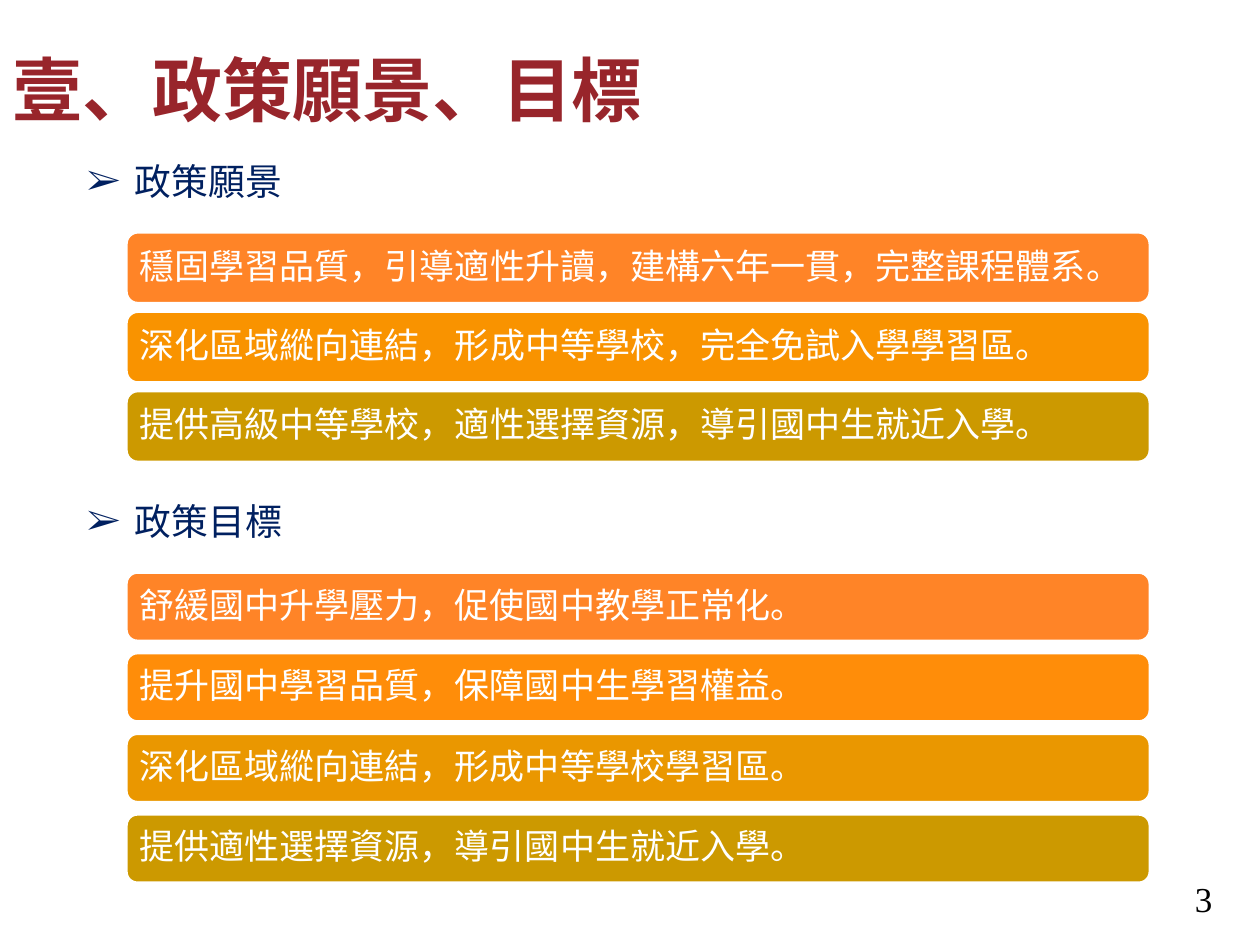
from dataclasses import dataclass

from lxml.etree import SubElement
from pptx import Presentation
from pptx.dml.color import RGBColor as RGB
from pptx.enum.shapes import MSO_SHAPE as SHAPE
from pptx.enum.text import MSO_ANCHOR as ANCHOR, MSO_AUTO_SIZE as FIT, PP_ALIGN as ALIGN
from pptx.oxml.ns import qn
from pptx.util import Inches, Pt

TITLE = "壹、政策願景、目標"
PAGE = "3"
SECTIONS = [
    {
        "heading": "政策願景", "heading_top": 1.21,
        "top": 1.84, "pitch": 0.63, "height": 0.57,
        "bars": [
            ("穩固學習品質，引導適性升讀，建構六年一貫，完整課程體系。", "FF8427"),
            ("深化區域縱向連結，形成中等學校，完全免試入學學習區。", "F99300"),
            ("提供高級中等學校，適性選擇資源，導引國中生就近入學。", "CC9900"),
        ],
    },
    {
        "heading": "政策目標", "heading_top": 3.91,
        "top": 4.54, "pitch": 0.64, "height": 0.55,
        "bars": [
            ("舒緩國中升學壓力，促使國中教學正常化。", "FF8427"),
            ("提升國中學習品質，保障國中生學習權益。", "FF8D09"),
            ("深化區域縱向連結，形成中等學校學習區。", "EA9700"),
            ("提供適性選擇資源，導引國中生就近入學。", "CC9900"),
        ],
    },
]


@dataclass(frozen=True)
class Theme:
    font: str = "Times New Roman"
    title: str = "98252B"
    heading: str = "002060"
    page: str = "000000"
    white: str = "FFFFFF"
    title_size: int = 40
    heading_size: int = 21
    text_size: int = 20


T = Theme()


def place(sp, left, top, width, height):
    sp.left, sp.top, sp.width, sp.height = map(Inches, (left, top, width, height))


def write(sp, text, size, color, align=ALIGN.LEFT, anchor=ANCHOR.MIDDLE, bold=False, spacing=1.0):
    tf = sp.text_frame
    tf.word_wrap = True
    tf.auto_size = FIT.NONE
    tf.vertical_anchor = anchor
    p = tf.paragraphs[0]
    p.alignment = align
    p.line_spacing = spacing
    p.space_before = Pt(0)
    r = p.add_run()
    r.text = text
    r.font.name = T.font
    r.font.size = Pt(size)
    r.font.bold = bold
    r.font.color.rgb = RGB.from_string(color)
    return p


def add_bullet(p, char, indent):
    pPr = p._p.get_or_add_pPr()
    pPr.set("marL", str(Inches(indent)))
    pPr.set("indent", str(-Inches(indent)))
    SubElement(pPr, qn("a:buFont"), typeface=T.font)
    SubElement(pPr, qn("a:buChar"), char=char)


def add_bar(s, text, color, top, height):
    sp = s.shapes.add_shape(SHAPE.ROUNDED_RECTANGLE, Inches(1), Inches(top), Inches(8.13), Inches(height))
    sp.shadow.inherit = False
    sp.fill.solid()
    sp.fill.fore_color.rgb = RGB.from_string(color)
    sp.line.color.rgb = RGB.from_string(T.white)
    sp.line.width = Pt(2)
    write(sp, text, T.text_size, T.white, spacing=0.9)
    tf = sp.text_frame
    tf.margin_left = tf.margin_right = Inches(0.08)
    tf.margin_top = tf.margin_bottom = Inches(0.08)


def main():
    prs = Presentation()
    prs.slide_width, prs.slide_height = Inches(10), Inches(7.5)
    s = prs.slides.add_slide(prs.slide_layouts.get_by_name("Two Content"))
    title, *headings = list(s.placeholders)[:3]

    place(title, 0, 0.02, 10, 1.45)
    write(title, TITLE, T.title_size, T.title, bold=True, spacing=0.9)

    for section, sp in zip(SECTIONS, headings):
        place(sp, 0.59, section["heading_top"], 2, 0.45)
        p = write(sp, section["heading"], T.heading_size, T.heading, anchor=ANCHOR.TOP)
        add_bullet(p, "➢", 0.38)
        for i, (text, color) in enumerate(section["bars"]):
            add_bar(s, text, color, section["top"] + i * section["pitch"], section["height"])

    page = s.shapes.add_textbox(Inches(7.47), Inches(6.93), Inches(2.25), Inches(0.4))
    write(page, PAGE, T.text_size, T.page, align=ALIGN.RIGHT)
    prs.save("out.pptx")


if __name__ == "__main__":
    main()
